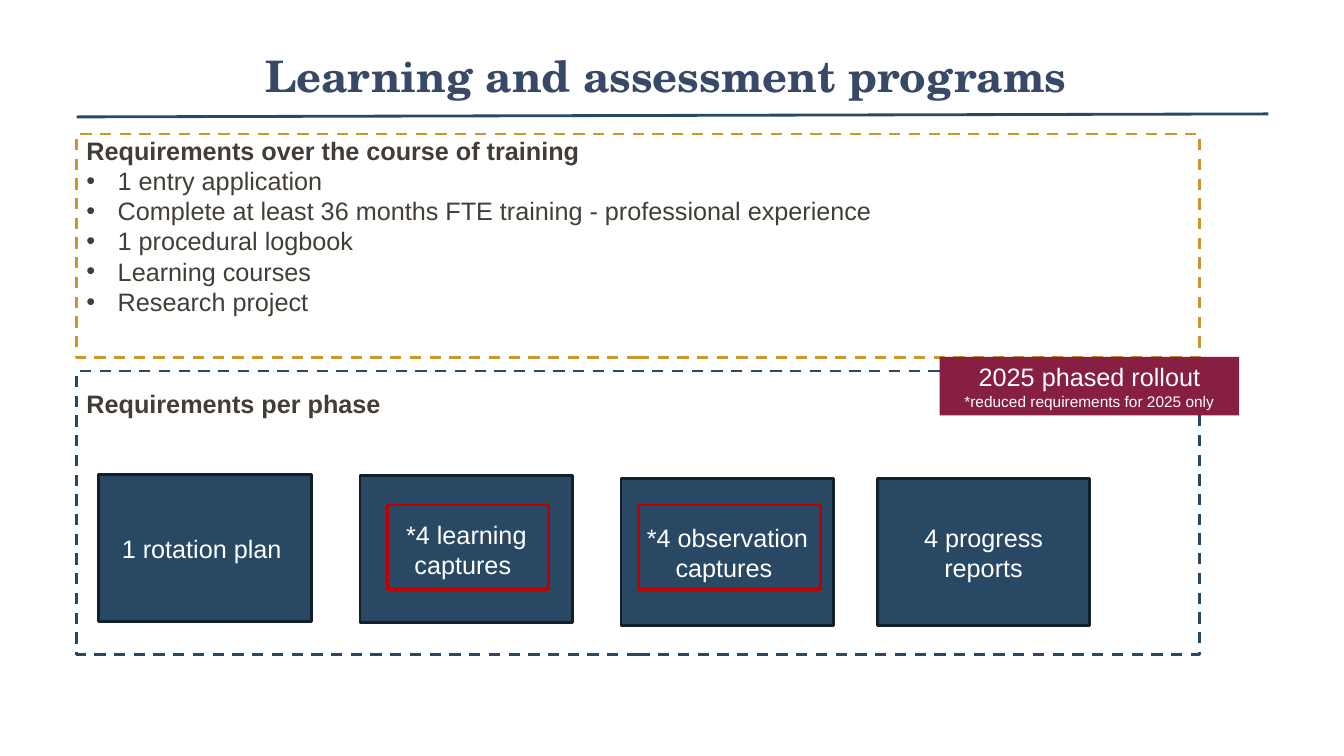
from dataclasses import dataclass
from typing import Optional

from lxml import etree
from pptx import Presentation
from pptx.dml.color import RGBColor
from pptx.enum import dml, shapes, text
from pptx.oxml import ns
from pptx.util import Inches, Pt

NAVY = RGBColor(0x29, 0x48, 0x64)
DARK_NAVY = RGBColor(0x12, 0x20, 0x2C)
TITLE_BLUE = RGBColor(0x38, 0x49, 0x67)
GOLD = RGBColor(0xCB, 0x97, 0x2B)
BROWN = RGBColor(0x43, 0x3E, 0x35)
MAROON = RGBColor(0x86, 0x1F, 0x41)
RED = RGBColor(0xC0, 0x00, 0x00)
WHITE = RGBColor(0xFF, 0xFF, 0xFF)

PANEL_LEFT, PANEL_WIDTH = 0.76, 11.14
CARD_WIDTH, CARD_HEIGHT = 2.11, 1.46


@dataclass
class Box:
    left: float
    top: float
    width: float
    height: float
    fill: Optional[RGBColor] = None
    line: Optional[RGBColor] = None
    dashed: bool = False


@dataclass
class Line:
    words: str
    size: float = 18
    color: RGBColor = WHITE
    bold: bool = False
    font: str = "Arial"
    bullet: bool = False


@dataclass
class Card:
    left: float
    top: float
    label: str


def add_bullet(paragraph) -> None:
    properties = paragraph._p.get_or_add_pPr()
    properties.set("marL", str(Inches(0.31)))
    properties.set("indent", str(-Inches(0.31)))
    etree.SubElement(properties, ns.qn("a:buFont")).set("typeface", "Arial")
    etree.SubElement(properties, ns.qn("a:buChar")).set("char", "•")


def write(frame, lines: list[Line], alignment, anchor) -> None:
    frame.word_wrap = True
    frame.vertical_anchor = anchor
    for index, line in enumerate(lines):
        paragraph = frame.add_paragraph() if index else frame.paragraphs[0]
        paragraph.text = line.words
        paragraph.alignment = alignment
        if line.bullet:
            add_bullet(paragraph)
        font = paragraph.font
        font.name, font.size, font.bold = line.font, Pt(line.size), line.bold
        font.color.rgb = line.color


def add_box(slide, box: Box, *lines: Line) -> None:
    shape = slide.shapes.add_shape(
        shapes.MSO_SHAPE.RECTANGLE, Inches(box.left), Inches(box.top),
        Inches(box.width), Inches(box.height))
    shape.shadow.inherit = False
    if box.fill is None:
        shape.fill.background()
    else:
        shape.fill.solid()
        shape.fill.fore_color.rgb = box.fill
    if box.line is None:
        shape.line.fill.background()
    else:
        shape.line.color.rgb = box.line
        shape.line.width = Pt(2)
        if box.dashed:
            shape.line.dash_style = dml.MSO_LINE.DASH
    if lines:
        write(shape.text_frame, list(lines), text.PP_ALIGN.CENTER, text.MSO_ANCHOR.MIDDLE)


def add_text(slide, box: Box, lines: list[Line], alignment=text.PP_ALIGN.LEFT,
             anchor=text.MSO_ANCHOR.TOP):
    shape = slide.shapes.add_textbox(
        Inches(box.left), Inches(box.top), Inches(box.width), Inches(box.height))
    write(shape.text_frame, lines, alignment, anchor)
    return shape.text_frame


def add_rule(slide) -> None:
    rule = slide.shapes.add_connector(
        shapes.MSO_CONNECTOR.STRAIGHT, Inches(PANEL_LEFT), Inches(1.16),
        Inches(12.58), Inches(1.13))
    rule.line.color.rgb = NAVY
    rule.line.width = Pt(2)
    etree.SubElement(rule._element.spPr, ns.qn("a:effectLst"))


TRAINING = [
    "1 entry application",
    "Complete at least 36 months FTE training - professional experience",
    "1 procedural logbook",
    "Learning courses",
    "Research project",
]
CARDS = [
    Card(0.98, 4.71, "1 rotation plan "),
    Card(3.57, 4.72, "*4 learning captures "),
    Card(6.16, 4.75, "*4 observation captures "),
    Card(8.7, 4.75, "4 progress reports"),
]
HIGHLIGHTS = [Box(3.84, 5.01, 1.6, 0.84, line=RED), Box(6.33, 5.01, 1.81, 0.84, line=RED)]


def main() -> None:
    presentation = Presentation()
    presentation.slide_width, presentation.slide_height = Inches(13.33), Inches(7.5)
    slide = presentation.slides.add_slide(presentation.slide_layouts[6])

    # Title and rule
    title = Line("Learning and assessment programs ", 31, TITLE_BLUE, True, "TeX Gyre Schola")
    frame = add_text(slide, Box(1.66, 0.29, 10.01, 0.91), [title],
                     text.PP_ALIGN.CENTER, text.MSO_ANCHOR.MIDDLE)
    frame.margin_left = frame.margin_right = Inches(0.07)
    frame.margin_top = frame.margin_bottom = Inches(0.04)
    add_rule(slide)

    # Requirements over the whole training
    add_box(slide, Box(PANEL_LEFT, 1.33, PANEL_WIDTH, 2.22, line=GOLD, dashed=True))
    heading = Line("Requirements over the course of training", color=BROWN, bold=True)
    items = [Line(item, color=BROWN, bullet=True) for item in TRAINING]
    add_text(slide, Box(PANEL_LEFT, 1.29, 9.84, 1.92), [heading, *items])

    # Requirements per phase
    add_box(slide, Box(PANEL_LEFT, 3.68, PANEL_WIDTH, 2.81, line=NAVY, dashed=True))
    add_text(slide, Box(PANEL_LEFT, 3.8, 6.67, 0.4),
             [Line("Requirements per phase", color=BROWN, bold=True)])
    for card in CARDS:
        add_box(slide, Box(card.left, card.top, CARD_WIDTH, CARD_HEIGHT, NAVY, DARK_NAVY),
                Line(card.label))

    # Rollout tag and highlights of the reduced requirements
    add_box(slide, Box(9.32, 3.54, 2.97, 0.58, MAROON), Line("2025 phased rollout"),
            Line("*reduced requirements for 2025 only", 11))
    for highlight in HIGHLIGHTS:
        add_box(slide, highlight)

    presentation.save("out.pptx")


if __name__ == "__main__":
    main()
